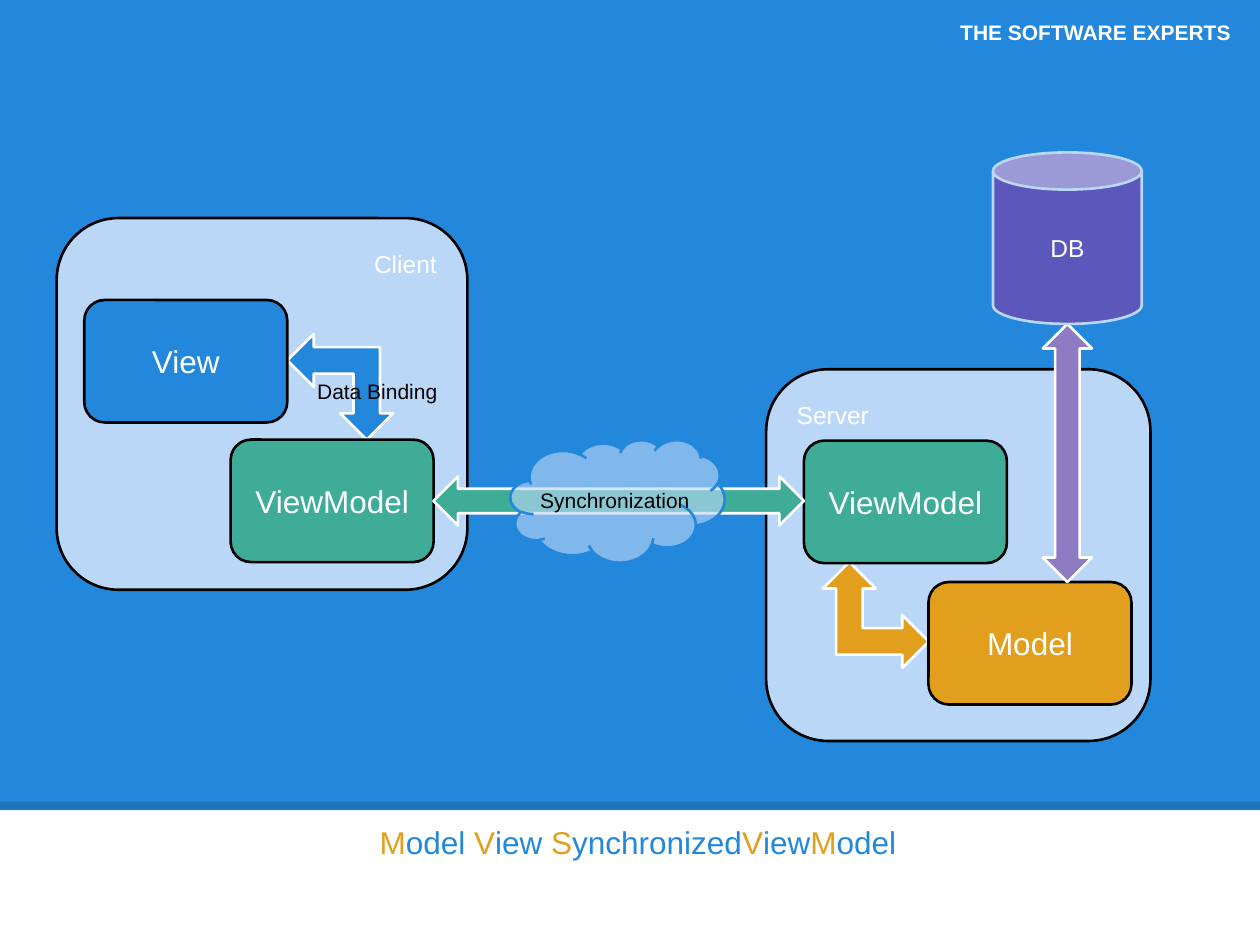
from itertools import groupby

from lxml import etree
from pptx import Presentation
from pptx.dml.color import RGBColor
from pptx.enum.shapes import MSO_CONNECTOR, MSO_SHAPE
from pptx.enum.text import MSO_ANCHOR, MSO_AUTO_SIZE, PP_ALIGN
from pptx.oxml.ns import qn
from pptx.util import Pt

ROUND, RECT = MSO_SHAPE.ROUNDED_RECTANGLE, MSO_SHAPE.RECTANGLE
ELBOW, DOUBLE = MSO_SHAPE.LEFT_UP_ARROW, MSO_SHAPE.LEFT_RIGHT_ARROW
CLOUD, CAN = MSO_SHAPE.CLOUD, MSO_SHAPE.CAN
STRAIGHT = MSO_CONNECTOR.STRAIGHT
TOP, MIDDLE = MSO_ANCHOR.TOP, MSO_ANCHOR.MIDDLE
LEFT, CENTER, RIGHT = PP_ALIGN.LEFT, PP_ALIGN.CENTER, PP_ALIGN.RIGHT
NO_FIT = MSO_AUTO_SIZE.NONE

BLUE, PALE, GREEN, GOLD = "2388DB", "BBD7F8", "3FAC98", "E29F1D"
PURPLE, INDIGO, WHITE, BLACK = "8E7CC3", "5B57BB", "FFFFFF", "000000"
WIDE, HIGH = 720, 540
CARD_W, CARD_H = 116, 70
BEND, THICK = 60.5, 28


def rgb(code):
    return RGBColor.from_string(code)


def fade(part, percent):
    """Make the first solid colour of a part translucent."""
    color = next(part.iter(qn("a:srgbClr")))
    etree.SubElement(color, qn("a:alpha"), val=str(percent * 1000))


def write(frame, text, size=18, color=WHITE, align=CENTER, anchor=MIDDLE,
          bold=False, caps=None):
    """Fill a frame with one paragraph; caps colours the capital letters."""
    frame.word_wrap = True
    frame.auto_size = NO_FIT
    frame.vertical_anchor = anchor
    frame.margin_left = frame.margin_right = Pt(7.2)
    frame.margin_top = frame.margin_bottom = Pt(7.2)
    para = frame.paragraphs[0]
    para.alignment = align
    para.space_before = Pt(0)
    pieces = [(False, text)]
    if caps:
        pieces = [(up, "".join(part)) for up, part in groupby(text, str.isupper)]
    for up, part in pieces:
        run = para.add_run()
        run.text = part
        font = run.font
        font.name, font.size, font.bold = "Arial", Pt(size), bold
        font.color.rgb = rgb(caps if up else color)
    return para


def draw(slide, kind, box, fill, line=None, turn=0):
    shape = slide.shapes.add_shape(kind, *map(Pt, box))
    shape.shadow.inherit = False
    shape.rotation = turn
    shape.fill.solid()
    shape.fill.fore_color.rgb = rgb(fill)
    if line:
        shape.line.color.rgb = rgb(line)
        shape.line.width = Pt(1.5)
    else:
        shape.line.fill.background()
    return shape


def label(slide, box, text, **style):
    write(slide.shapes.add_textbox(*map(Pt, box)).text_frame, text, **style)


def card(slide, x, y, text, fill):
    shape = draw(slide, ROUND, (x, y, CARD_W, CARD_H), fill, BLACK)
    write(shape.text_frame, text)


def panel(slide, box, text, align):
    shape = draw(slide, ROUND, box, PALE, BLACK)
    write(shape.text_frame, text, size=14, align=align, anchor=TOP)


def banner(slide, box):
    x, y, w, h = box
    draw(slide, RECT, box, BLUE)
    # Dark edge along the bottom
    edge = slide.shapes.add_connector(
        STRAIGHT, Pt(x), Pt(y + h - 2.7), Pt(x + w), Pt(y + h - 2.7))
    edge.line.width = Pt(4.5)
    edge.line.color.rgb = rgb(BLACK)
    props = edge.element.spPr
    fade(props, 15)
    etree.SubElement(props, qn("a:effectLst"))
    # Tagline at top right
    label(slide, (x + w - 186.5, y + 7, 177, 22.5), "THE SOFTWARE EXPERTS",
          size=12, bold=True, align=RIGHT)


def caption(slide, box):
    body = slide.placeholders[1]
    body.left, body.top, body.width, body.height = map(Pt, box)
    para = write(body.text_frame, "Model View SynchronizedViewModel",
                 color=BLUE, caps=GOLD, anchor=TOP)
    props = para._p.get_or_add_pPr()
    props.set("marL", str(Pt(22.5)))
    props.set("indent", str(Pt(-13.5)))
    # Bring the caption in front of the banner
    body.element.getparent().append(body.element)


def client(slide, box):
    x, y = box[:2]
    panel(slide, box, "Client", RIGHT)
    draw(slide, ELBOW, (x + 131.8, y + 66.2, BEND, BEND), BLUE, WHITE, 270)
    card(slide, x + 15.8, y + 46.8, "View", BLUE)
    card(slide, x + 99.4, y + 126.6, "ViewModel", GREEN)
    label(slide, (x + 141.8, y + 89.2, CARD_W, 19.5), "Data Binding",
          size=12, color=BLACK, align=LEFT)


def server(slide, box):
    x, y = box[:2]
    panel(slide, box, "Server", LEFT)
    draw(slide, ELBOW, (x + 32.4, y + 110.2, BEND, BEND), GOLD, WHITE, 90)
    card(slide, x + 21.6, y + 40.8, "ViewModel", GREEN)
    card(slide, x + 92.8, y + 121.6, "Model", GOLD)


def sync(slide, box):
    x, y, w, h = box
    mid = y + h / 2
    draw(slide, DOUBLE, (x, mid - THICK / 2, w, THICK), GREEN, WHITE)
    cloud = draw(slide, CLOUD, (x + 44, y, 122.4, h), PALE, BLUE)
    fade(cloud.element.spPr, 62)
    label(slide, (x + 49.7, mid - 10, 108, 19.5), "Synchronization",
          size=12, color=BLACK)


def store(slide, box):
    x, y, w, h = box
    tall, reach = 98, h - 98
    # Upright arrow: a level one turned about its centre
    draw(slide, DOUBLE,
         (x + w / 2 - reach / 2, y + tall + reach / 2 - THICK / 2, reach, THICK),
         PURPLE, WHITE, 90)
    can = draw(slide, CAN, (x, y, w, tall), INDIGO, PALE)
    write(can.text_frame, "DB", size=14)


def main():
    deck = Presentation()
    deck.slide_width, deck.slide_height = Pt(WIDE), Pt(HIGH)
    slide = deck.slides.add_slide(deck.slide_layouts[2])
    title = slide.shapes.title.element
    title.getparent().remove(title)

    banner(slide, (0, 0, WIDE, 463))
    caption(slide, (36, 463, 648, 54.7))
    client(slide, (32.4, 124.6, 234.7, 212.4))
    server(slide, (437.8, 211, 219.6, 212.4))
    sync(slide, (247.7, 251.3, 211.7, CARD_H))
    store(slide, (567.4, 87.1, 85, 245.5))
    deck.save("out.pptx")


if __name__ == "__main__":
    main()
